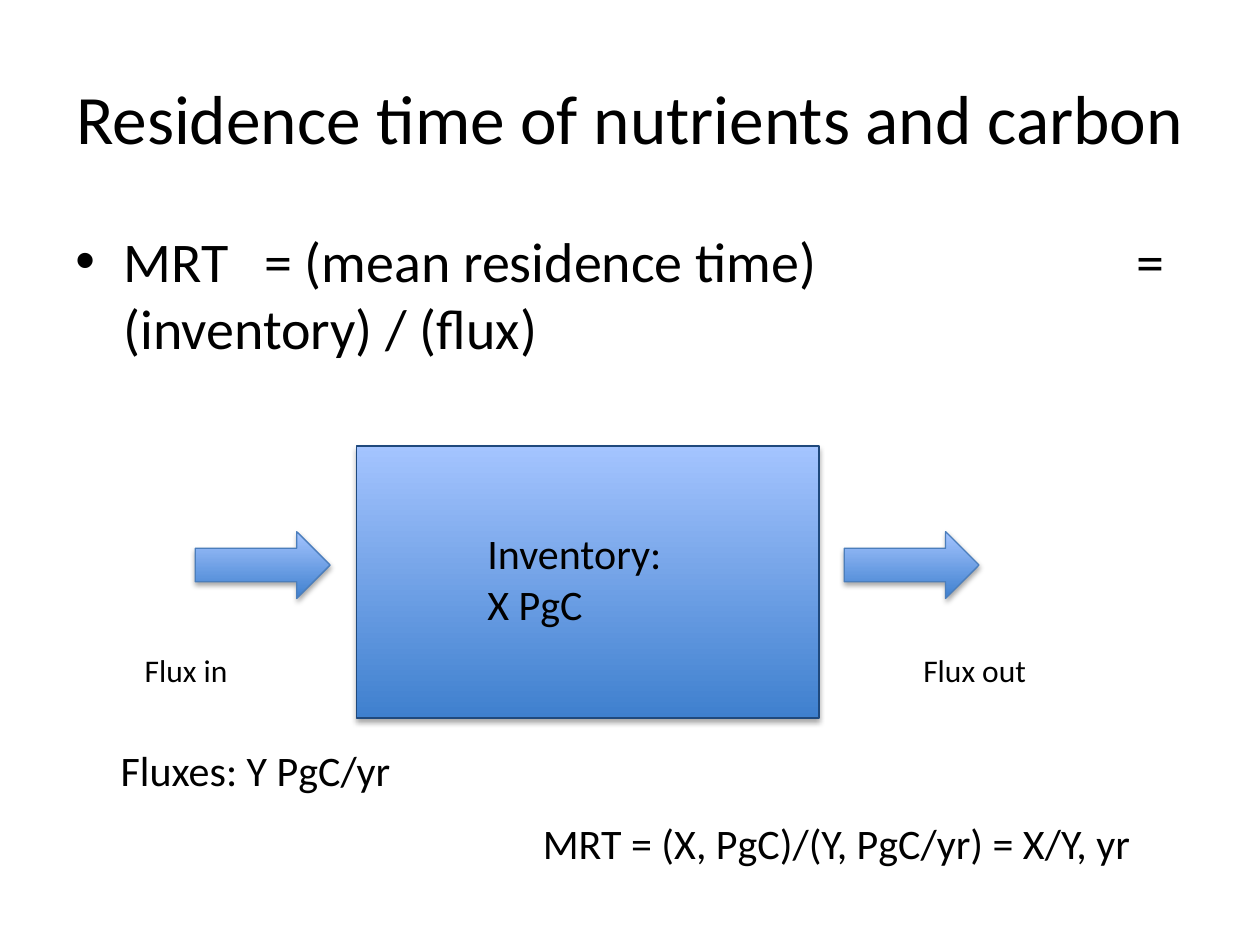
import lxml.etree
import pptx
import pptx.dml.color
import pptx.enum.shapes
import pptx.enum.text
import pptx.oxml
import pptx.oxml.ns
import pptx.util
from pptx.util import Inches

SHAPES = pptx.enum.shapes.MSO_SHAPE
ANCHOR = pptx.enum.text.MSO_ANCHOR
NAMESPACE = pptx.oxml.ns.nsdecls("a")


def color(value):
    return pptx.dml.color.RGBColor.from_string(value)


def add_text(left, top, width, height, text, size):
    box = page.shapes.add_textbox(Inches(left), Inches(top), Inches(width), Inches(height))
    box.text_frame.word_wrap = True
    para = box.text_frame.paragraphs[0]
    para.text = text
    para.font.size = pptx.util.Pt(size)
    para.font.name = "Calibri"
    para.font.color.rgb = color("000000")
    return box


deck = pptx.Presentation()
deck.slide_width = Inches(10)
deck.slide_height = Inches(7.5)
page = deck.slides.add_slide(deck.slide_layouts[6])

title = add_text(0.5, 0.3, 9, 1.25, "Residence time of nutrients and carbon", 39.6)
title.text_frame.vertical_anchor = ANCHOR.MIDDLE
title.text_frame.paragraphs[0].alignment = pptx.enum.text.PP_ALIGN.CENTER

definition = add_text(0.5, 1.75, 9, 4.95, "MRT\t= (mean residence time)\t= (inventory) / (flux)", 32)
para = definition.text_frame.paragraphs[0]
para.space_before = pptx.util.Pt(6.4)
properties = para._p.get_or_add_pPr()
properties.set("marL", str(Inches(0.38)))
properties.set("indent", str(Inches(-0.38)))
bullet = [
    f'<a:buFont {NAMESPACE} typeface="Arial"/>',
    f'<a:buChar {NAMESPACE} char="•"/>',
    f'<a:tabLst {NAMESPACE}><a:tab pos="{Inches(1.5)}" algn="l"/>'
    f'<a:tab pos="{Inches(8.43)}" algn="l"/></a:tabLst>',
]
run_defaults = properties.find(pptx.oxml.ns.qn("a:defRPr"))
for markup in bullet:
    run_defaults.addprevious(pptx.oxml.parse_xml(markup))

diagram = [
    (SHAPES.RECTANGLE, 2.83, 3.54, 3.67, 2.16, "1F497D"),
    (SHAPES.RIGHT_ARROW, 1.55, 4.22, 1.07, 0.53, "4B7EBC"),
    (SHAPES.RIGHT_ARROW, 6.7, 4.22, 1.07, 0.53, "4B7EBC"),
]
for kind, left, top, width, height, outline in diagram:
    shape = page.shapes.add_shape(kind, Inches(left), Inches(top), Inches(width), Inches(height))
    shape.fill.gradient()
    shape.fill.gradient_angle = 90
    for stop, value in zip(shape.fill.gradient_stops, ("3F80CE", "A4C4FF")):
        stop.color.rgb = color(value)
    shape.line.color.rgb = color(outline)
    shape.line.width = pptx.util.Pt(0.75)
    shape.shadow.inherit = False
    effects = shape._element.spPr.find(pptx.oxml.ns.qn("a:effectLst"))
    effects.append(pptx.oxml.parse_xml(
        f'<a:outerShdw {NAMESPACE} blurRad="{pptx.util.Pt(3.1)}" dist="{pptx.util.Pt(1.8)}" '
        'dir="5400000" rotWithShape="0"><a:srgbClr val="000000">'
        '<a:alpha val="35000"/></a:srgbClr></a:outerShdw>'))

labels = [
    (7.23, 5.12, 1.23, 0.4, "Flux out", 18),
    (1.05, 5.12, 1.23, 0.4, "Flux in", 18),
    (3.77, 4.14, 1.78, 0.91, "Inventory: X PgC", 24),
    (0.86, 5.86, 2.83, 0.5, "Fluxes: Y PgC/yr", 24),
    (4.21, 6.44, 4.97, 0.5, "MRT = (X, PgC)/(Y, PgC/yr) = X/Y, yr", 24),
]
for label in labels:
    add_text(*label)

deck.save("out.pptx")
